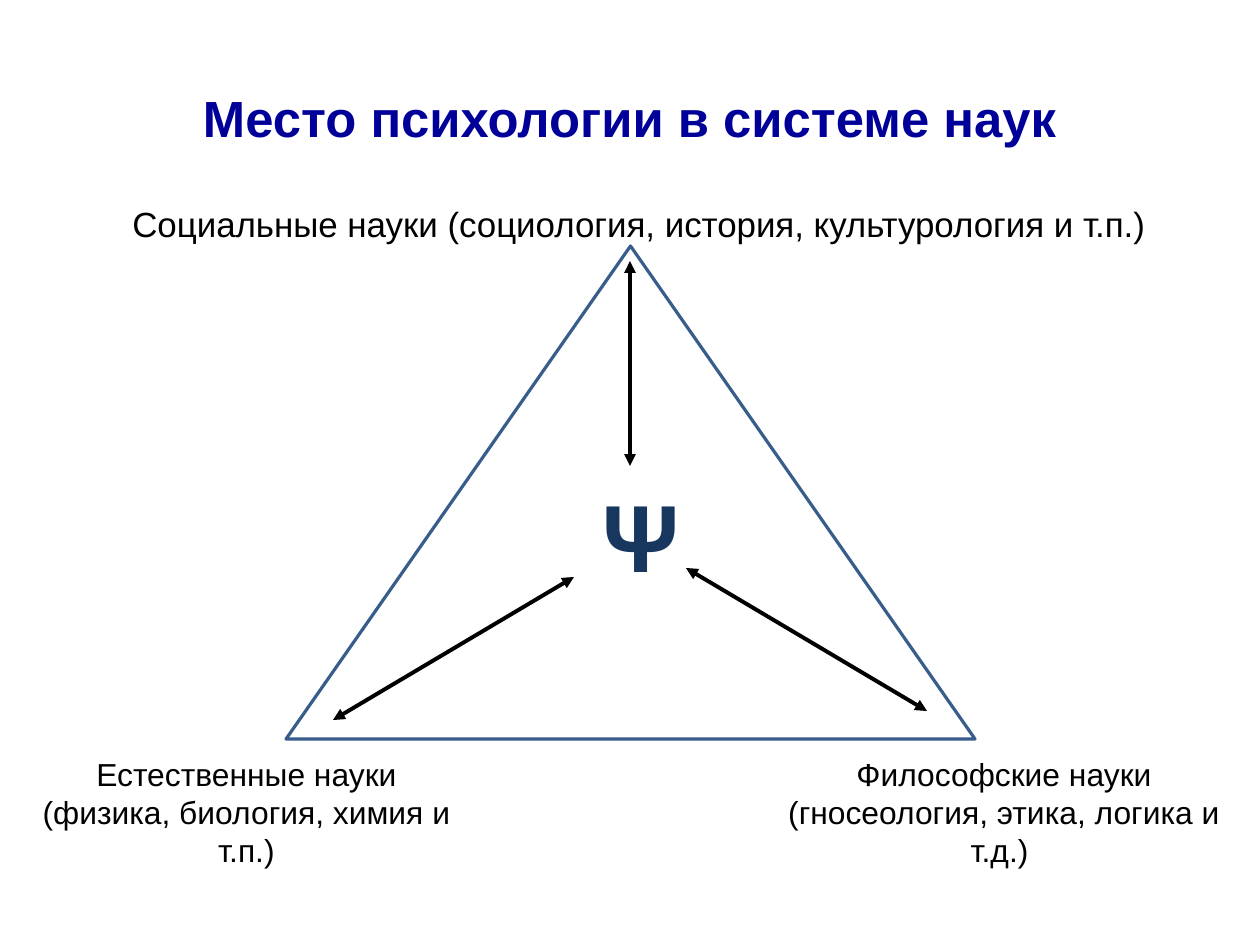
from pptx import Presentation
from pptx.dml.color import RGBColor
from pptx.enum.shapes import MSO_CONNECTOR, MSO_SHAPE
from pptx.enum.text import MSO_ANCHOR, PP_ALIGN
from pptx.oxml.ns import qn
from pptx.util import Pt
from lxml.etree import SubElement

PX = 8000  # EMU per px
color = RGBColor.from_string

deck = Presentation()
deck.slide_width, deck.slide_height = 1260 * PX, 945 * PX
slide = deck.slides.add_slide(deck.slide_layouts[6])
shapes = slide.shapes


def add_text(text, box, size, ink="000000", bold=False, anchor=MSO_ANCHOR.TOP):
    """Add a centred, wrapping Arial text; box is left, top, width, height in px."""
    frame = shapes.add_textbox(*(v * PX for v in box)).text_frame
    frame.word_wrap = True
    frame.vertical_anchor = anchor
    paragraph = frame.paragraphs[0]
    paragraph.alignment = PP_ALIGN.CENTER
    run = paragraph.add_run()
    run.text = text
    run.font.name = "Arial"
    run.font.size = Pt(size)
    run.font.bold = bold
    run.font.color.rgb = color(ink)


add_text("Место психологии в системе наук", (63, 38, 1134, 158), 32,
         ink="000099", bold=True, anchor=MSO_ANCHOR.MIDDLE)

triangle = shapes.add_shape(MSO_SHAPE.ISOSCELES_TRIANGLE,
                            286 * PX, 246 * PX, 689 * PX, 493 * PX)
triangle.shadow.inherit = False
triangle.fill.background()
triangle.line.color.rgb = color("385D8A")
triangle.line.width = Pt(2)

add_text("Ψ", (591, 472, 79, 126), 60, ink="17375E", bold=True)
add_text("Социальные науки (социология, история, культурология и т.п.)",
         (99, 197, 1080, 54), 22)
add_text("Естественные науки (физика, биология, химия и т.п.)",
         (30, 749, 433, 126), 20)
add_text("Философские науки (гносеология, этика, логика и т.д.) ",
         (768, 749, 472, 126), 20)

science_links = [
    (630, 261, 630, 466),
    (574, 577, 333, 720),
    (927, 711, 686, 568),
]
for ends in science_links:
    link = shapes.add_connector(MSO_CONNECTOR.STRAIGHT, *(v * PX for v in ends))
    link.line.color.rgb = color("000000")
    link.line.width = Pt(2.5)
    outline = link.line._get_or_add_ln()
    for arrowhead in ("a:headEnd", "a:tailEnd"):
        SubElement(outline, qn(arrowhead), type="triangle")
    SubElement(link._element.spPr, qn("a:effectLst"))

deck.save("out.pptx")
